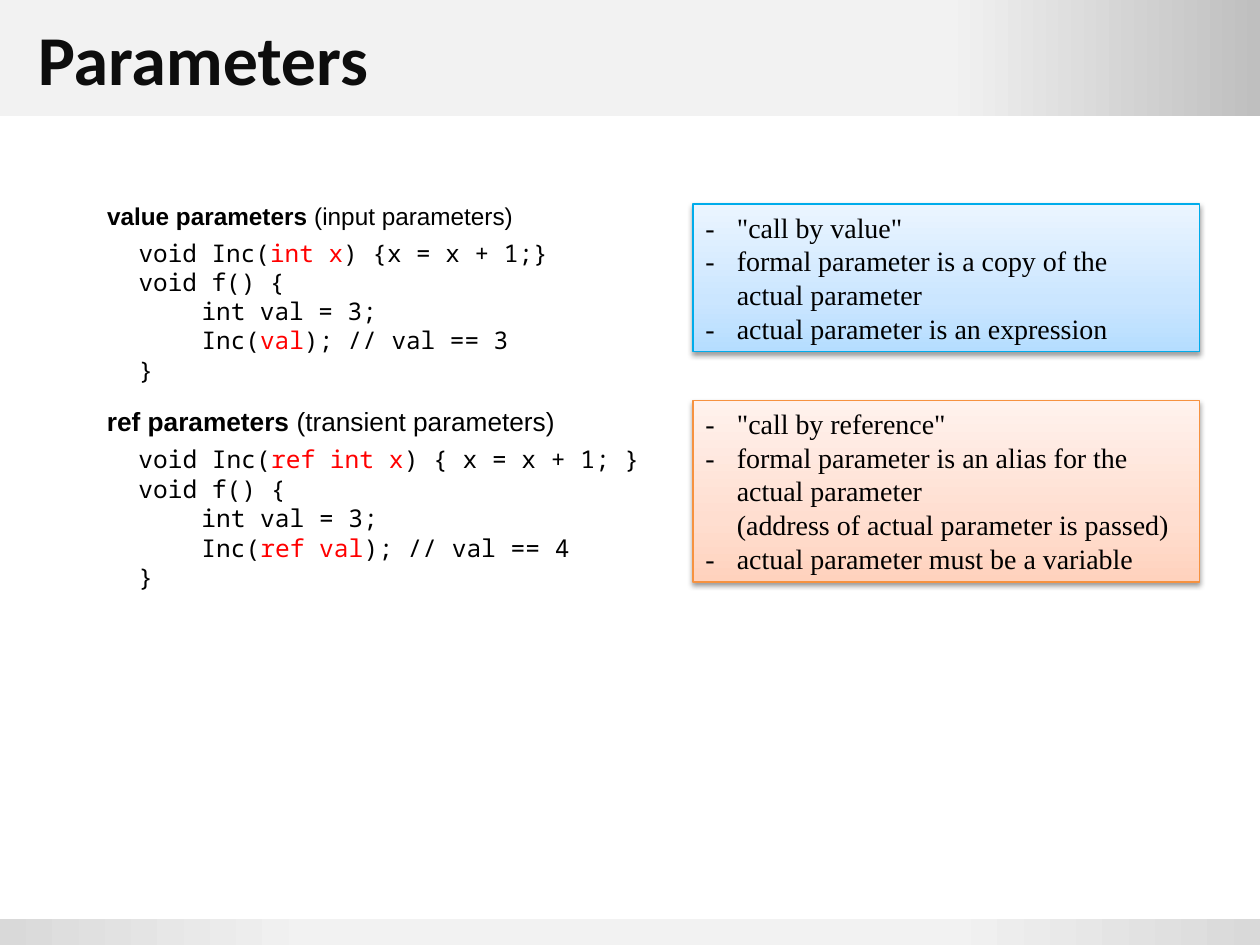
from dataclasses import dataclass

from lxml import etree
from pptx import Presentation
from pptx.dml.color import RGBColor
from pptx.enum import shapes, text
from pptx.oxml import ns
from pptx.util import Inches, Pt


@dataclass(frozen=True)
class Theme:
    ink: str = "000000"
    title_ink: str = "0D0D0D"
    accent: str = "FF0000"
    title_font: str = "Calibri"
    heading_font: str = "Arial"
    code_font: str = "Noto Sans Mono"
    note_font: str = "Times New Roman"
    title_size: float = 40
    note_size: float = 16
    header: tuple = ((75, "F2F2F2"), (100, "BFBFBF"))
    footer: tuple = ((0, "D9D9D9"), (25, "F2F2F2"), (75, "F2F2F2"), (100, "D9D9D9"))
    blue: tuple = ((0, "B5DDFF"), (35, "CBE6FF"), (100, "EBF5FF"))
    blue_line: str = "00ACEB"
    orange: tuple = ((0, "FFD2BD"), (35, "FFDED0"), (100, "FFF2ED"))
    orange_line: str = "F69240"


THEME = Theme()


def add_node(parent, tag, **attributes):
    values = {name: str(value) for name, value in attributes.items()}
    return etree.SubElement(parent, ns.qn(f"a:{tag}"), values)


def set_font(font, name, size, color, bold=None):
    font.name = name
    font.size = Pt(size)
    font.color.rgb = RGBColor.from_string(color)
    font.bold = bold


def set_tab(para, position):
    stops = add_node(para._p.get_or_add_pPr(), "tabLst")
    add_node(stops, "tab", pos=Inches(position), algn="l")


def place(item, box):
    item.left, item.top, item.width, item.height = map(Inches, box)


def new_para(frame, index):
    return frame.add_paragraph() if index else frame.paragraphs[0]


def add_gradient_box(page, box, stops, angle):
    panel = page.shapes.add_shape(shapes.MSO_SHAPE.RECTANGLE, *map(Inches, box))
    panel.shadow.inherit = False
    panel.fill.background()
    properties = panel._element.spPr
    gradient = etree.Element(ns.qn("a:gradFill"), rotWithShape="1")
    stop_list = add_node(gradient, "gsLst")
    for position, color in stops:
        stop = add_node(stop_list, "gs", pos=position * 1000)
        add_node(stop, "srgbClr", val=color)
    add_node(gradient, "lin", ang=angle * 60000, scaled=0)
    properties.replace(properties.find(ns.qn("a:noFill")), gradient)
    return panel


def add_band(page, box, stops):
    band = add_gradient_box(page, box, stops, 0)
    band.line.fill.background()
    page.shapes._spTree.insert(2, band._element)


def add_title(page, box, title):
    heading = page.shapes.title
    place(heading, box)
    frame = heading.text_frame
    frame.vertical_anchor = text.MSO_ANCHOR.MIDDLE
    para = frame.paragraphs[0]
    para.text = title
    para.alignment = text.PP_ALIGN.LEFT
    set_font(para.font, THEME.title_font, THEME.title_size, THEME.title_ink, True)


def fill_code(item, box, size, name, remark, lines):
    place(item, box)
    frame = item.text_frame
    frame.word_wrap = True
    frame.auto_size = text.MSO_AUTO_SIZE.NONE
    frame.vertical_anchor = text.MSO_ANCHOR.TOP
    for index, pieces in enumerate([(name, remark), *lines]):
        para = new_para(frame, index)
        layout = para._p.get_or_add_pPr()
        layout.set("marL", str(Inches(0.25)))
        layout.set("indent", str(Inches(-0.25)))
        add_node(layout, "buNone")
        set_tab(para, 0.5)
        para.space_before = Pt(size * 0.3 if index == 1 else 0)
        family = THEME.code_font if index else THEME.heading_font
        set_font(para.font, family, size, THEME.ink)
        for order, piece in enumerate(pieces):
            span = para.add_run()
            span.text = piece
            if index == 0:
                span.font.bold = order == 0
            elif order == 1:
                span.font.color.rgb = RGBColor.from_string(THEME.accent)


def add_note(page, box, stops, outline, lines):
    note = add_gradient_box(page, box, stops, 270)
    note.line.color.rgb = RGBColor.from_string(outline)
    note.line.width = Pt(0.75)
    effects = note._element.spPr.find(ns.qn("a:effectLst"))
    shadow = add_node(effects, "outerShdw", blurRad=Pt(3.1), dist=Pt(1.6),
                      dir=90 * 60000, rotWithShape=0)
    add_node(add_node(shadow, "srgbClr", val="000000"), "alpha", val=38000)
    frame = note.text_frame
    frame.word_wrap = True
    frame.auto_size = text.MSO_AUTO_SIZE.SHAPE_TO_FIT_TEXT
    frame.vertical_anchor = text.MSO_ANCHOR.TOP
    for index, line in enumerate(lines):
        para = new_para(frame, index)
        para.text = line
        para.alignment = text.PP_ALIGN.LEFT
        set_tab(para, 0.25)
        set_font(para.font, THEME.note_font, THEME.note_size, THEME.ink)


def code_lines(signature, body, argument, result):
    return [
        ("\tvoid Inc(", signature, body),
        ("\tvoid f() {",),
        ("\t\tint val = 3;",),
        ("\t\tInc(", argument, f"); // val == {result}"),
        ("\t}",),
    ]


def main():
    deck = Presentation()
    deck.slide_width, deck.slide_height = Inches(10), Inches(7.5)
    page = deck.slides.add_slide(deck.slide_layouts[1])
    add_band(page, (0, 0, 10, 0.92), THEME.header)
    add_band(page, (0, 7.29, 10, 0.21), THEME.footer)
    add_title(page, (0.2, 0, 9.61, 0.92), "Parameters")

    fill_code(page.placeholders[1], (0.75, 1.55, 5.03, 1.44), 13.9,
              "value parameters", " (input parameters)",
              code_lines("int x", ") {x = x + 1;}", "val", 3))
    add_note(page, (5.5, 1.62, 4.02, 1.17), THEME.blue, THEME.blue_line, [
        '-\t"call by value"',
        "-\tformal parameter is a copy of the\v\tactual parameter",
        "-\tactual parameter is an expression",
    ])
    add_note(page, (5.5, 3.18, 4.02, 1.44), THEME.orange, THEME.orange_line, [
        '-\t"call by reference"',
        "-\tformal parameter is an alias for the",
        "\tactual parameter",
        "\t(address of actual parameter is passed)",
        "-\tactual parameter must be a variable",
    ])
    ref_box = (0.75, 3.17, 4.75, 1.68)
    fill_code(page.shapes.add_textbox(*map(Inches, ref_box)), ref_box, 14,
              "ref parameters", " (transient parameters)",
              code_lines("ref int x", ") { x = x + 1; }", "ref val", 4))
    page.shapes[-1].text_frame.paragraphs[0].font.size = Pt(15)
    deck.save("out.pptx")


if __name__ == "__main__":
    main()
